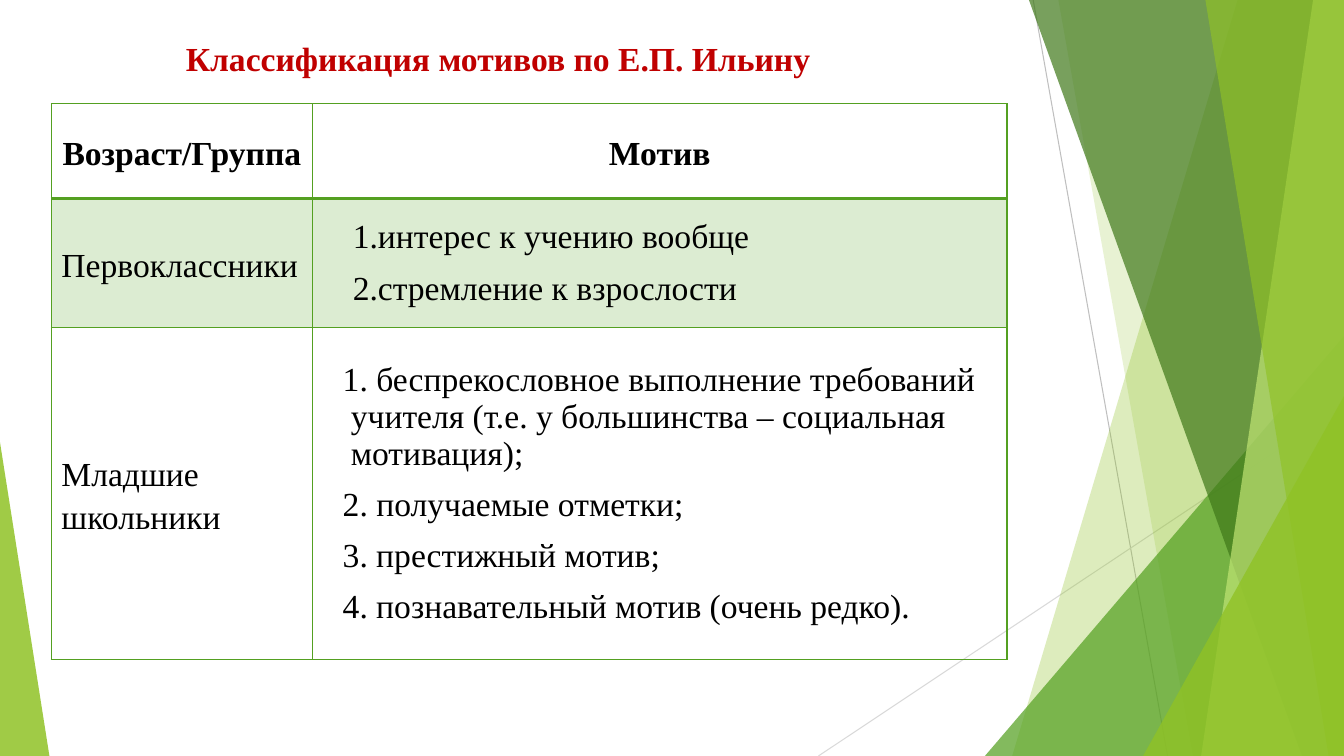
from dataclasses import dataclass
from lxml.etree import SubElement as Sub
from pptx import Presentation
from pptx.dml.color import RGBColor as Rgb
from pptx.enum.shapes import MSO_CONNECTOR as Conn, MSO_SHAPE as Kind
from pptx.enum.text import MSO_ANCHOR as Anchor, PP_ALIGN as Align
from pptx.oxml import parse_xml
from pptx.oxml.ns import nsdecls, qn
from pptx.util import Pt

WIDE, HIGH = 960, 540
FONT, SIZE = "Times New Roman", 24
HUES = {
    "white": "FFFFFF", "black": "000000", "red": "C00000",
    "lime": "90C226", "green": "54A021", "dark": "3F7819", "pale": "C0E474",
    "gray": "BFBFBF", "silver": "D9D9D9",
}


@dataclass
class Ray:
    start: tuple
    end: tuple
    hue: str


@dataclass
class Band:
    top: float
    base: float
    hue: str
    alpha: int


@dataclass
class Wedge:
    left: float
    top: float
    width: float
    tip: float
    hue: str
    alpha: int


@dataclass
class Item:
    text: str
    margin: float = 0
    indent: float = 0
    first: int = 0
    lead: float = 1.15
    bold: bool = False
    align: Align = Align.LEFT


@dataclass
class Row:
    height: float
    cells: list
    tint: bool = False
    top: int = 1
    base: int = 1


RAYS = [
    Ray((738, 0), (834, HIGH), "gray"),
    Ray((WIDE, 290), (584.6, HIGH), "silver"),
]
FACETS = [
    Band(884, 723, "lime", 30),
    Band(756, 852, "lime", 20),
    Wedge(703.5, 240, 256.5, 1, "green", 72),
    Band(735, 929.5, "dark", 70),
    Band(938, 858, "pale", 70),
    Band(861, 949, "lime", 65),
    Wedge(816.5, 283, 143.5, 1, "lime", 80),
    Wedge(0, 316, 35.3, 0, "lime", 85),
]


def head(text: str) -> list:
    return [Item(text, bold=True, align=Align.CENTER)]


def group(text: str) -> list:
    return [Item(text, 7.2)]


def motive(text: str, indent: float, first: int = 0) -> Item:
    return Item(text, 27.4, indent, first, 1)


ROWS = [
    Row(67.7, [head("Возраст/Группа"), head("Мотив")], base=2),
    Row(92.2, [group("Первоклассники"), [
        motive("интерес к учению вообще", 1.4, 1),
        motive("стремление к взрослости", 1.4, 1),
    ]], tint=True, top=2),
    Row(236.9, [group("Младшие школьники"), [
        motive("1. беспрекословное выполнение требований учителя "
               "(т.е. у большинства – социальная мотивация);", -5.8),
        motive("2. получаемые отметки;", -5.8),
        motive(" престижный мотив;", -5.8, 3),
        motive(" познавательный мотив (очень редко).", -5.8, 3),
    ]]),
]


def color(hue: str) -> Rgb:
    return Rgb.from_string(HUES[hue])


def paint(fill, node, hue: str, alpha: int) -> None:
    fill.solid()
    fill.fore_color.rgb = color(hue)
    tone = next(node.iter(qn("a:srgbClr")))
    Sub(tone, qn("a:alpha")).set("val", str(alpha * 1000))


def draw_ray(shapes, ray: Ray) -> None:
    line = shapes.add_connector(Conn.STRAIGHT, *map(Pt, ray.start + ray.end))
    line.line.color.rgb = color(ray.hue)
    line.line.width = Pt(0.75)
    Sub(line._element.spPr, qn("a:effectLst"))


def draw_facet(shapes, facet: Band | Wedge) -> None:
    if isinstance(facet, Band):
        pen = shapes.build_freeform(facet.top, 0, Pt(1))
        pen.add_line_segments([(WIDE, 0), (WIDE, HIGH), (facet.base, HIGH)])
        shape = pen.convert_to_shape()
    else:
        box = (facet.left, facet.top, facet.width, HIGH - facet.top)
        shape = shapes.add_shape(Kind.ISOSCELES_TRIANGLE, *map(Pt, box))
        shape.adjustments[0] = facet.tip
    shape.shadow.inherit = False
    paint(shape.fill, shape._element.spPr, facet.hue, facet.alpha)
    shape.line.fill.background()


def style(para, hue: str, bold: bool) -> None:
    for run in para.runs:
        run.font.name = FONT
        run.font.size = Pt(SIZE)
        run.font.bold = bold
        run.font.color.rgb = color(hue)


def write(para, item: Item) -> None:
    para.text = item.text
    para.alignment = item.align
    para.line_spacing = item.lead
    para.space_after = Pt(10)
    style(para, "black", item.bold)
    props = para._p.get_or_add_pPr()
    props.set("marL", str(Pt(item.margin)))
    props.set("indent", str(Pt(item.indent)))
    if item.first:
        mark = Sub(props, qn("a:buAutoNum"))
        mark.set("type", "arabicPeriod")
        mark.set("startAt", str(item.first))
    if item.indent:
        tab = Sub(Sub(props, qn("a:tabLst")), qn("a:tab"))
        tab.set("pos", str(Pt(36)))
        tab.set("algn", "l")


def fill_cell(cell, items: list, row: Row) -> None:
    cell.vertical_anchor = Anchor.MIDDLE
    cell.margin_left = cell.margin_right = cell.margin_top = cell.margin_bottom = 0
    frame = cell.text_frame
    for spot, item in enumerate(items):
        write(frame.add_paragraph() if spot else frame.paragraphs[0], item)
    props = cell._tc.get_or_add_tcPr()
    if row.tint:
        paint(cell.fill, props, "green", 20)
    else:
        cell.fill.background()
    sides = {"lnL": 1, "lnR": 1, "lnT": row.top, "lnB": row.base}
    for spot, (side, width) in enumerate(sides.items()):
        props.insert(spot, parse_xml(
            f'<a:{side} {nsdecls("a")} w="{Pt(width)}"><a:solidFill>'
            f'<a:srgbClr val="{HUES["green"]}"/></a:solidFill></a:{side}>'))


def draw_table(shapes) -> None:
    box = (36.7, 74.2, 682.6, sum(row.height for row in ROWS))
    table = shapes.add_table(len(ROWS), 2, *map(Pt, box)).table
    table.first_row = table.horz_banding = False
    for col, width in zip(table.columns, (186.5, 496.1)):
        col.width = Pt(width)
    for line, row in zip(table.rows, ROWS):
        line.height = Pt(row.height)
        for cell, items in zip(line.cells, row.cells):
            fill_cell(cell, items, row)


def draw_title(shapes) -> None:
    frame = shapes.add_textbox(*map(Pt, (98, 23.8, 515.5, 36))).text_frame
    frame.word_wrap = True
    frame.text = "Классификация мотивов по Е.П. Ильину"
    frame.paragraphs[0].alignment = Align.CENTER
    style(frame.paragraphs[0], "red", True)


def main() -> None:
    deck = Presentation()
    deck.slide_width, deck.slide_height = Pt(WIDE), Pt(HIGH)
    slide = deck.slides.add_slide(deck.slide_layouts[6])
    slide.background.fill.solid()
    slide.background.fill.fore_color.rgb = color("white")
    for ray in RAYS:
        draw_ray(slide.shapes, ray)
    for facet in FACETS:
        draw_facet(slide.shapes, facet)
    draw_table(slide.shapes)
    draw_title(slide.shapes)
    deck.save("out.pptx")


if __name__ == "__main__":
    main()
